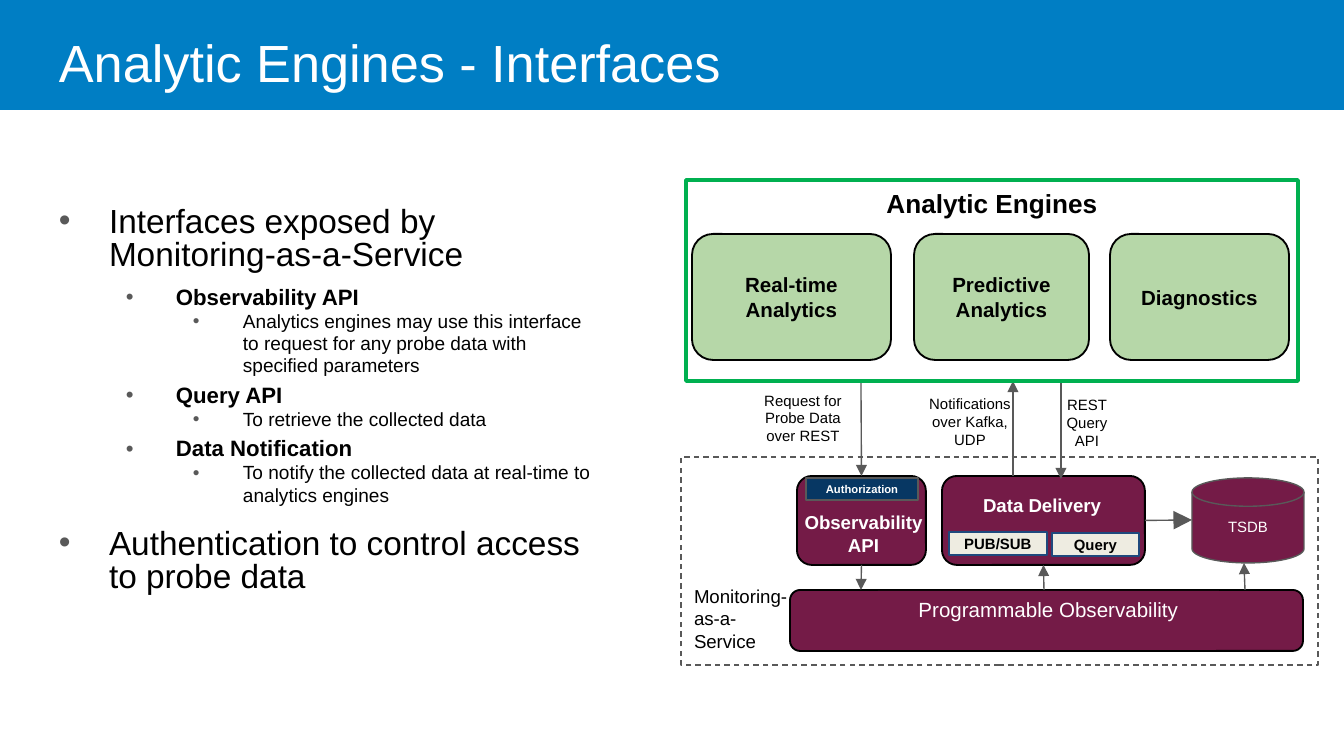
"""Build the Analytic Engines interfaces slide."""
import pptx
import pptx.util
import pptx.dml.color
import pptx.enum.shapes
import pptx.enum.text
import pptx.enum.dml
import pptx.oxml
import pptx.oxml.ns

RGB = pptx.dml.color.RGBColor
SHAPE = pptx.enum.shapes.MSO_SHAPE
ANCHOR = pptx.enum.text.MSO_ANCHOR
ALIGN = pptx.enum.text.PP_ALIGN
Pt = pptx.util.Pt

WHITE, BLACK, GREY = RGB(255, 255, 255), RGB(0, 0, 0), RGB(0x59, 0x59, 0x59)
BLUE, NAVY, INK = RGB(0, 0x7E, 0xC4), RGB(7, 0x37, 0x63), RGB(0x1F, 0x49, 0x7D)
PLUM, SAGE = RGB(0x74, 0x1B, 0x47), RGB(0xB6, 0xD7, 0xA8)
GREEN, CREAM = RGB(0, 0xB0, 0x50), RGB(0xEE, 0xEC, 0xE1)
EMU_PER_PX = 914400 / 134.4
INSET = 13

STYLES = {
    "band": dict(fill=BLUE),
    "zone": dict(line=GREY, weight=0.75, dash=True, anchor=ANCHOR.BOTTOM, align=ALIGN.LEFT, size=10),
    "node": dict(kind=SHAPE.ROUNDED_RECTANGLE, fill=PLUM, line=BLACK),
    "caption": dict(fill=PLUM, size=11, color=WHITE),
    "disk": dict(kind=SHAPE.FLOWCHART_MAGNETIC_DISK, fill=PLUM, line=GREY, weight=0.75,
                 anchor=ANCHOR.BOTTOM, size=8, color=WHITE),
    "tag": dict(fill=CREAM, line=INK, weight=0.75, size=8, bold=True),
    "auth": dict(fill=NAVY, line=GREY, weight=0.75, size=6, color=WHITE, bold=True),
    "frame": dict(fill=WHITE, line=GREEN, weight=2, anchor=ANCHOR.TOP, size=14, bold=True, top=7),
    "engine": dict(kind=SHAPE.ROUNDED_RECTANGLE, fill=SAGE, line=BLACK, size=11, bold=True),
    "name": dict(kind=None, size=10, color=WHITE, bold=True),
    "note": dict(kind=None, size=8),
    "title": dict(kind=None, size=28, color=WHITE, anchor=ANCHOR.TOP, align=ALIGN.LEFT, top=17),
}

BACK = [
    ("band", "", 0, 0, 1344, 110),
    ("zone", "Monitoring-\nas-a-\nService", 681, 457, 637, 208),
    ("title", "Analytic Engines - Interfaces", 46, 13, 1253, 85),
]
NODES = {
    "observability": ("node", "", 797, 476, 129, 89),
    "bar": ("node", "", 790, 590, 513, 61),
    "storage": ("disk", "TSDB", 1192, 478, 112, 85),
    "delivery": ("node", "", 942, 476, 203, 89),
}
LINKS = [
    (861, 381, 861, 476, None, ("observability", 0), "med"),
    (861, 565, 861, 590, ("observability", 2), None, "med"),
    (1044, 590, 1044, 565, None, ("delivery", 2), "med"),
    (1245, 590, 1244, 563, None, None, "med"),
    (1013, 476, 1013, 381, None, None, "med"),
    (1061, 381, 1061, 479, None, None, "med"),
    (1145, 520, 1192, 520, ("delivery", 3), None, "lg"),
]
FRONT = [
    ("caption", "Programmable Observability", 878, 591, 341, 36),
    ("tag", "PUB/SUB", 949, 532, 98, 23),
    ("tag", "Query", 1052, 533, 87, 23),
    ("name", "Data Delivery", 962, 496, 160, 18),
    ("note", "REST Query API", 1044, 399, 86, 47),
    ("note", "Notifications over Kafka, UDP", 914, 396, 112, 51),
    ("note", "Request for Probe Data over REST", 747, 387, 112, 62),
    ("auth", "Authorization", 806, 478, 112, 22),
    ("frame", "Analytic Engines", 686, 180, 612, 201),
] + [("engine", text, x, 234, w, 126) for text, x, w in (
    ("Real-time Analytics", 692, 199),
    ("Predictive Analytics", 914, 175),
    ("Diagnostics", 1110, 179),
)] + [("name", "Observability API", 790, 512, 147, 43)]

LEVELS = [
    dict(size=17.9, bold=False, spacing=0.83),
    dict(size=11.9, bold=True, spacing=0.97),
    dict(size=10.2, bold=False, spacing=0.97),
]
OUTLINE = [
    (0, "Interfaces exposed by Monitoring-as-a-Service", 0, 6),
    (1, "Observability API", 0, 0),
    (2, "Analytics engines may use this interface to request for any probe data "
        "with specified parameters", 0, 0),
    (1, "Query API", 3, 0),
    (2, "To retrieve the collected data", 0, 0),
    (1, "Data Notification", 3, 0),
    (2, "To notify the collected data at real-time to analytics engines", 0, 0),
    (0, "Authentication to control access to probe data", 12, 0),
]


def px(n):
    return pptx.util.Emu(round(n * EMU_PER_PX))


def set_font(p, size, color=BLACK, bold=False):
    for r in p.runs:
        for key, value in dict(name="Arial", size=Pt(size), bold=bold).items():
            setattr(r.font, key, value)
        r.font.color.rgb = color


def set_frame(tf, anchor, top=INSET):
    values = dict(word_wrap=True, vertical_anchor=anchor, margin_left=px(INSET),
                  margin_right=px(INSET), margin_top=px(top), margin_bottom=px(INSET))
    for key, value in values.items():
        setattr(tf, key, value)


def add_box(shapes, style, text, *box):
    f = STYLES[style]
    box = [px(n) for n in box]
    kind = f.get("kind", SHAPE.RECTANGLE)
    if kind is None:
        s = shapes.add_textbox(*box)
    else:
        s = shapes.add_shape(kind, *box)
        s.shadow.inherit = False
        if "fill" in f:
            s.fill.solid()
            s.fill.fore_color.rgb = f["fill"]
        else:
            s.fill.background()
        if "line" in f:
            s.line.color.rgb = f["line"]
            s.line.width = Pt(f.get("weight", 1))
        else:
            s.line.fill.background()
        if f.get("dash"):
            s.line.dash_style = pptx.enum.dml.MSO_LINE.DASH
    if text:
        tf = s.text_frame
        set_frame(tf, f.get("anchor", ANCHOR.MIDDLE), f.get("top", INSET))
        tf.text = text
        for p in tf.paragraphs:
            p.alignment = f.get("align", ALIGN.CENTER)
            set_font(p, f["size"], f.get("color", BLACK), f.get("bold", False))
    return s


def add_arrow(shapes, nodes, x1, y1, x2, y2, start, end, head):
    c = shapes.add_connector(pptx.enum.shapes.MSO_CONNECTOR.STRAIGHT, px(x1), px(y1), px(x2), px(y2))
    if start:
        c.begin_connect(nodes[start[0]], start[1])
    if end:
        c.end_connect(nodes[end[0]], end[1])
    c.line.color.rgb = GREY
    c.line.width = Pt(0.75)
    sub = pptx.oxml.ns.qn
    tail = c.line._get_or_add_ln().makeelement(sub("a:tailEnd"), dict(type="triangle", w=head, len=head))
    c.line._get_or_add_ln().append(tail)
    sp_pr = c._element.spPr
    sp_pr.append(sp_pr.makeelement(sub("a:effectLst"), {}))


def add_outline(shapes):
    tf = shapes.add_textbox(px(46), px(194), px(564), px(440)).text_frame
    set_frame(tf, ANCHOR.TOP)
    for i, (level, text, before, after) in enumerate(OUTLINE):
        f = LEVELS[level]
        p = tf.paragraphs[0] if i == 0 else tf.add_paragraph()
        p.level = level
        ppr = p._p.get_or_add_pPr()
        ppr.set("marL", str(px(50 + 67 * level)))
        ppr.set("indent", str(-px(50)))
        p.line_spacing = f["spacing"]
        p.space_before, p.space_after = Pt(before), Pt(after)
        for tag, attrs in (("buClr", {}), ("buFont", dict(typeface="Arial")), ("buChar", dict(char="•"))):
            el = ppr.makeelement(pptx.oxml.ns.qn("a:" + tag), attrs)
            if tag == "buClr":
                el.append(el.makeelement(pptx.oxml.ns.qn("a:srgbClr"), dict(val=str(GREY))))
            ppr.append(el)
        p.add_run().text = text
        set_font(p, f["size"], bold=f["bold"])


def main():
    prs = pptx.Presentation()
    prs.slide_width, prs.slide_height = px(1344), px(756)
    shapes = prs.slides.add_slide(prs.slide_layouts[6]).shapes
    for item in BACK:
        add_box(shapes, *item)
    nodes = {key: add_box(shapes, *item) for key, item in NODES.items()}
    for link in LINKS:
        add_arrow(shapes, nodes, *link)
    for item in FRONT:
        add_box(shapes, *item)
    add_outline(shapes)
    prs.save("out.pptx")


if __name__ == "__main__":
    main()
